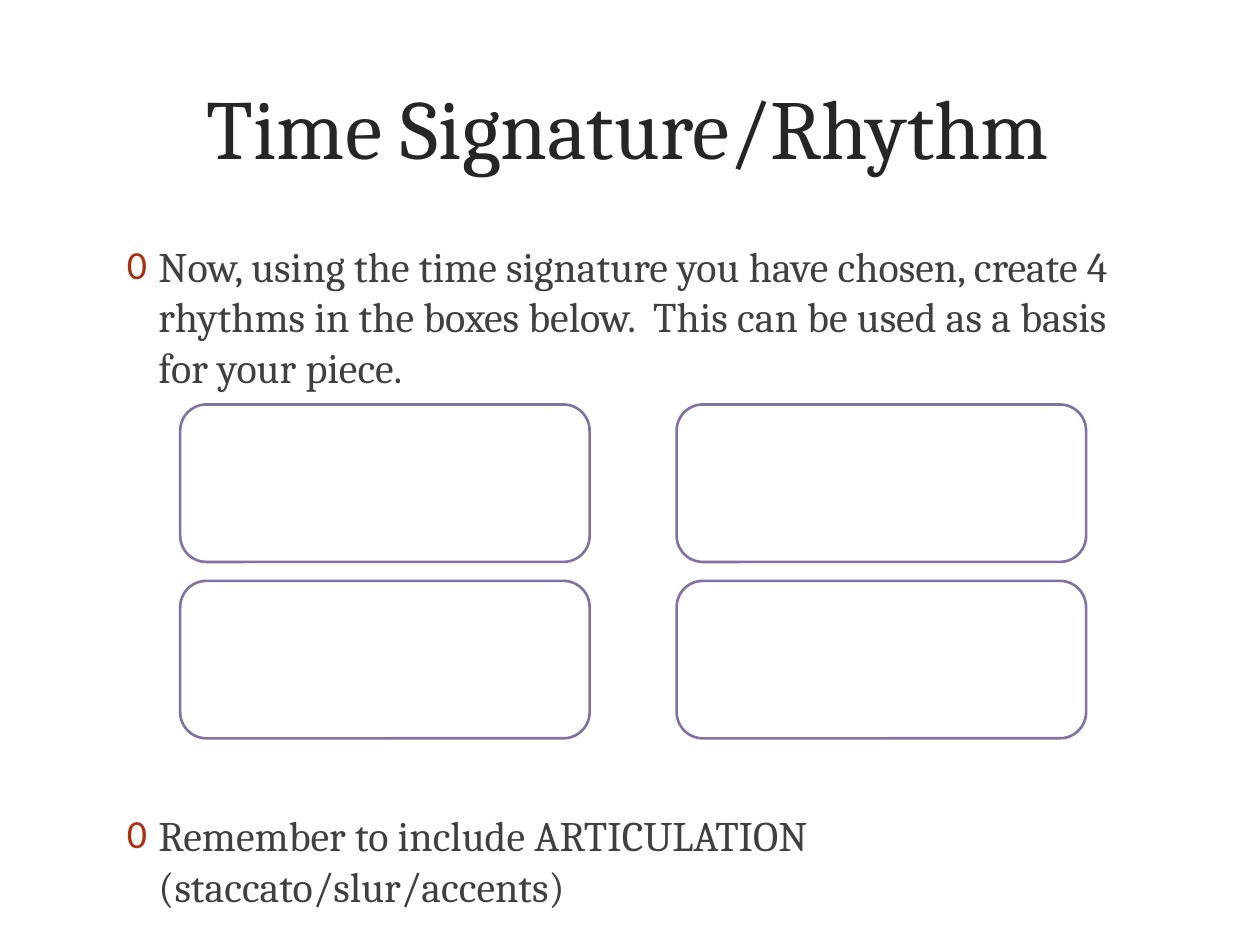
import dataclasses
import itertools

import lxml.etree
import pptx
import pptx.dml.color
import pptx.enum.shapes
import pptx.enum.text
import pptx.oxml.ns
import pptx.util


@dataclasses.dataclass(frozen=True)
class Theme:
    font: str = "Cambria"
    bullet_font: str = "Calibri"
    title_color: str = "262626"
    body_color: str = "404040"
    bullet_color: str = "A63212"
    box_fill: str = "FFFFFF"
    box_line: str = "8371A4"
    title_size: int = 48
    body_size: int = 24
    line_width: float = 1.5


@dataclasses.dataclass(frozen=True)
class Grid:
    left: float = 1.43
    top: float = 3.21
    width: float = 3.25
    height: float = 1.25
    column_step: float = 3.94
    row_step: float = 1.4

    def cell(self, column, row):
        left = self.left + column * self.column_step
        top = self.top + row * self.row_step
        return inches(left, top, self.width, self.height)


THEME = Theme()
GRID = Grid()


def inches(*lengths):
    return [pptx.util.Inches(length) for length in lengths]


def rgb(color):
    return pptx.dml.color.RGBColor.from_string(color)


def add_bullet(paragraph, character="0", indent=0.25):
    properties = paragraph._p.get_or_add_pPr()
    margin = pptx.util.Inches(indent)
    properties.set("marL", str(margin))
    properties.set("indent", str(-margin))

    def append(parent, tag, **attributes):
        name = pptx.oxml.ns.qn(f"a:{tag}")
        return lxml.etree.SubElement(parent, name, **attributes)

    append(append(properties, "buClr"), "srgbClr", val=THEME.bullet_color)
    append(properties, "buSzPct", val="95000")
    append(properties, "buFont", typeface=THEME.bullet_font)
    append(properties, "buChar", char=character)


def write(paragraph, text, *, size, color, bullet=False, align=None, before=0):
    if bullet:
        add_bullet(paragraph)
    if align is not None:
        paragraph.alignment = align
    paragraph.space_before = pptx.util.Pt(before)
    run = paragraph.add_run()
    run.text = text
    run.font.name = THEME.font
    run.font.size = pptx.util.Pt(size)
    run.font.color.rgb = rgb(color)


def add_text_frame(slide, bounds, anchor):
    frame = slide.shapes.add_textbox(*inches(*bounds)).text_frame
    frame.word_wrap = True
    frame.vertical_anchor = anchor
    return frame


def add_title(slide, text):
    frame = add_text_frame(slide, (0.59, 0.21, 8.79, 1.58), pptx.enum.text.MSO_ANCHOR.MIDDLE)
    write(frame.paragraphs[0], text, size=THEME.title_size,
          color=THEME.title_color, align=pptx.enum.text.PP_ALIGN.CENTER)


def add_instructions(slide, opening, reminder, gap):
    frame = add_text_frame(slide, (0.91, 1.86, 8.17, 5.28), pptx.enum.text.MSO_ANCHOR.TOP)
    body = dict(size=THEME.body_size, color=THEME.body_color, bullet=True)
    write(frame.paragraphs[0], opening, **body)
    write(frame.add_paragraph(), reminder, before=gap, **body)


def add_rhythm_box(slide, column, row):
    shape = slide.shapes.add_shape(
        pptx.enum.shapes.MSO_SHAPE.ROUNDED_RECTANGLE, *GRID.cell(column, row))
    shape.shadow.inherit = False
    shape.fill.solid()
    shape.fill.fore_color.rgb = rgb(THEME.box_fill)
    shape.line.color.rgb = rgb(THEME.box_line)
    shape.line.width = pptx.util.Pt(THEME.line_width)


def main():
    presentation = pptx.Presentation()
    presentation.slide_width, presentation.slide_height = inches(10, 7.5)
    slide = presentation.slides.add_slide(presentation.slide_layouts[6])
    add_title(slide, "Time Signature/Rhythm")
    add_instructions(
        slide,
        "Now, using the time signature you have chosen, create 4 rhythms "
        "in the boxes below.  This can be used as a basis for your piece.",
        "Remember to include ARTICULATION (staccato/slur/accents)",
        gap=239,
    )
    for row, column in itertools.product(range(2), repeat=2):
        add_rhythm_box(slide, column, row)
    presentation.save("out.pptx")


if __name__ == "__main__":
    main()
